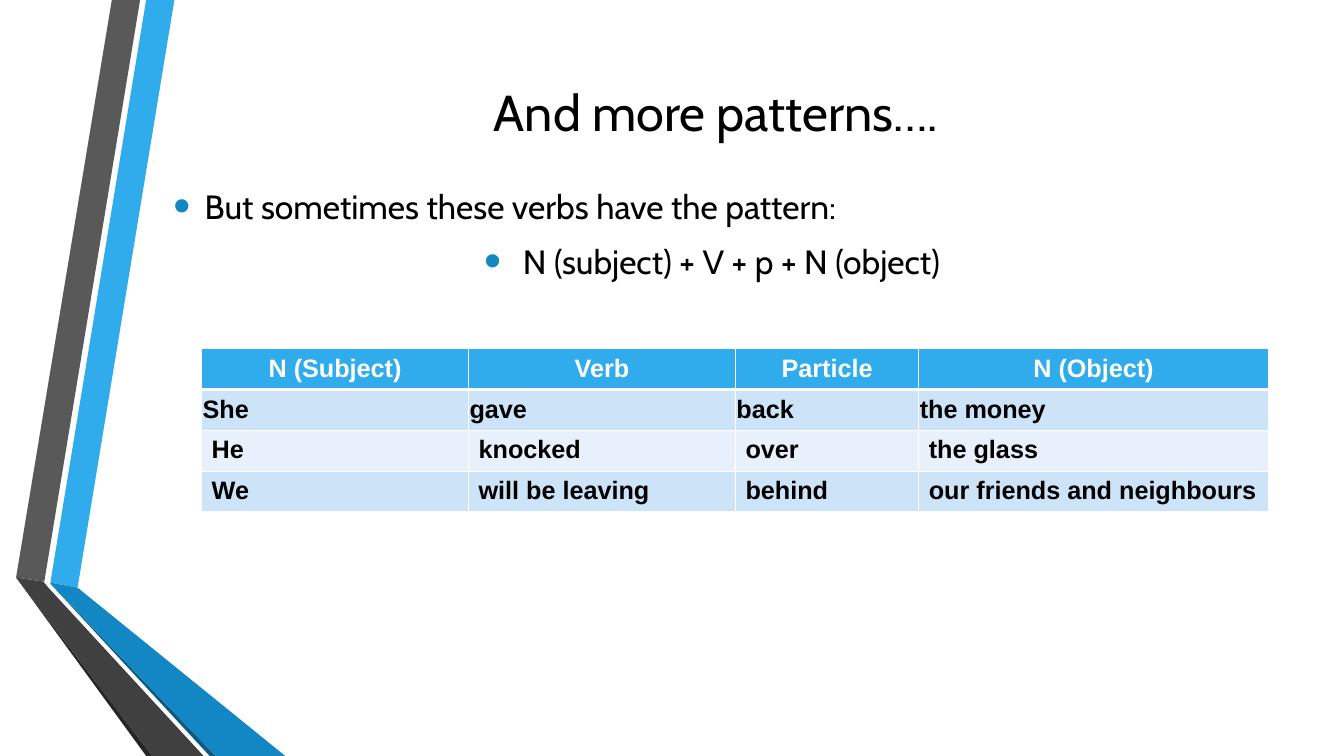
from dataclasses import dataclass

from pptx import Presentation
from pptx import util as u
from pptx.dml.color import RGBColor
from pptx.enum import text
from pptx.oxml import parse_xml
from pptx.oxml.ns import nsdecls


@dataclass(frozen=True)
class Theme:
    black: str = "000000"
    white: str = "FFFFFF"
    blue: str = "30ACEC"
    mid_blue: str = "1287C3"
    deep_blue: str = "0C5A82"
    grey: str = "595959"
    dark_grey: str = "404040"
    deep_grey: str = "262626"
    bands: tuple = ("CDE3F8", "E8F1FB")
    font: str = "Cabin"
    table_font: str = "Arial"
    title_size: int = 36
    body_size: int = 24
    table_size: int = 18


THEME = Theme()

RIBBONS = [
    (THEME.blue, [(0.5, 5.78), (0.77, 5.83), (1.73, 0), (1.45, 0)]),
    (THEME.grey, [(1.39, 0), (1.11, 0), (0.16, 5.73), (0.44, 5.77)]),
    (THEME.deep_grey, [(0.16, 5.73), (1.45, 7.5), (1.51, 7.5)]),
    (THEME.deep_blue, [(0.5, 5.79), (2.08, 7.5), (2.14, 7.5)]),
    (THEME.mid_blue, [(0.5, 5.79), (2.14, 7.5), (2.83, 7.5), (0.77, 5.83), (0.5, 5.78)]),
    (THEME.dark_grey, [(2.02, 7.5), (0.48, 5.83), (0.43, 5.77), (0.16, 5.73), (1.51, 7.5)]),
]

ROWS = [
    ("N (Subject)", "Verb", "Particle", "N (Object)"),
    ("She", "gave", "back", "the money"),
    ("He", "knocked", "over", "the glass"),
    ("We", "will be leaving", "behind", "our friends and neighbours"),
]
COLUMN_SHARES = (2.65, 2.65, 1.82, 3.47)


def add_run(p, words, size, font, color, bold=False):
    r = p.add_run()
    r.text = words
    r.font.size = u.Pt(size)
    r.font.name = font
    r.font.bold = bold
    r.font.color.rgb = RGBColor.from_string(color)


def place(sp, box):
    sp.left, sp.top, sp.width, sp.height = (u.Inches(n) for n in box)


def add_ribbons(s, box):
    left, top = box[:2]
    for color, points in RIBBONS:
        first, *rest = [(u.Inches(left + x), u.Inches(top + y)) for x, y in points]
        builder = s.shapes.build_freeform(*first)
        builder.add_line_segments(rest, close=True)
        sp = builder.convert_to_shape()
        sp.shadow.inherit = False
        sp.fill.solid()
        sp.fill.fore_color.rgb = RGBColor.from_string(color)
        sp.line.fill.background()


def fill_title(s, box):
    sp = s.shapes.title
    place(sp, box)
    tf = sp.text_frame
    tf.auto_size = text.MSO_AUTO_SIZE.NONE
    tf.vertical_anchor = text.MSO_ANCHOR.MIDDLE
    p = tf.paragraphs[0]
    p.alignment = text.PP_ALIGN.CENTER
    add_run(p, "And more patterns….", THEME.title_size, THEME.font, THEME.black)


def add_bullet(p):
    pPr = p._p.get_or_add_pPr()
    pPr.set("marL", str(u.Inches(0.31)))
    pPr.set("indent", str(u.Inches(-0.31)))
    for xml in (
        f'<a:buClr {nsdecls("a")}><a:srgbClr val="{THEME.mid_blue}"/></a:buClr>',
        f'<a:buSzPct {nsdecls("a")} val="145000"/>',
        f'<a:buFont {nsdecls("a")} typeface="Arial"/>',
        f'<a:buChar {nsdecls("a")} char="•"/>',
    ):
        pPr.append(parse_xml(xml))


def fill_body(s, box):
    sp = s.placeholders[1]
    place(sp, box)
    tf = sp.text_frame
    tf.auto_size = text.MSO_AUTO_SIZE.NONE
    tf.vertical_anchor = text.MSO_ANCHOR.TOP
    tf.margin_top = u.Inches(0.38)
    lines = [
        ("But sometimes these verbs have the pattern:", text.PP_ALIGN.LEFT),
        (" N (subject) + V + p + N (object) ", text.PP_ALIGN.CENTER),
    ]
    for i, (words, align) in enumerate(lines):
        p = tf.add_paragraph() if i else tf.paragraphs[0]
        p.alignment = align
        p.space_before = u.Pt(4.8)
        p.space_after = u.Pt(6)
        add_bullet(p)
        add_run(p, words, THEME.body_size, THEME.font, THEME.black)


def set_borders(cell, row):
    tcPr = cell._tc.get_or_add_tcPr()
    widths = {"L": 1, "R": 1, "T": 3 if row == 1 else 1, "B": 3 if row == 0 else 1}
    for side, width in widths.items():
        tcPr.append(parse_xml(
            f'<a:ln{side} {nsdecls("a")} w="{u.Pt(width)}"><a:solidFill>'
            f'<a:srgbClr val="{THEME.white}"/></a:solidFill></a:ln{side}>'))


def fill_cell(cell, row, words):
    header = row == 0
    set_borders(cell, row)
    cell.fill.solid()
    color = THEME.blue if header else THEME.bands[(row - 1) % 2]
    cell.fill.fore_color.rgb = RGBColor.from_string(color)
    if row < 2:
        cell.vertical_anchor = text.MSO_ANCHOR.MIDDLE
        cell.margin_left = cell.margin_right = u.Inches(0.01)
        cell.margin_top = cell.margin_bottom = u.Inches(0.01)
    p = cell.text_frame.paragraphs[0]
    p.alignment = text.PP_ALIGN.CENTER if header else text.PP_ALIGN.LEFT
    add_run(p, words, THEME.table_size, THEME.table_font,
            THEME.white if header else THEME.black, bold=True)


def add_pattern_table(s, box):
    frame = s.shapes.add_table(len(ROWS), len(COLUMN_SHARES), *(u.Inches(n) for n in box))
    table = frame.table
    for column, share in zip(table.columns, COLUMN_SHARES):
        column.width = u.Inches(box[2] * share / sum(COLUMN_SHARES))
    for i, row in enumerate(ROWS):
        for j, words in enumerate(row):
            fill_cell(table.cell(i, j), i, words)


def build_pattern_slide(prs):
    s = prs.slides.add_slide(prs.slide_layouts[1])
    add_ribbons(s, (0, 0, 2.83, 7.5))
    fill_title(s, (1.62, 0.75, 10.96, 0.71))
    fill_body(s, (1.62, 1.46, 10.96, 3.42))
    add_pattern_table(s, (2, 3.46, 10.58, 1.62))


def main():
    prs = Presentation()
    prs.slide_width = u.Inches(13.33)
    prs.slide_height = u.Inches(7.5)
    build_pattern_slide(prs)
    prs.save("out.pptx")


if __name__ == "__main__":
    main()
